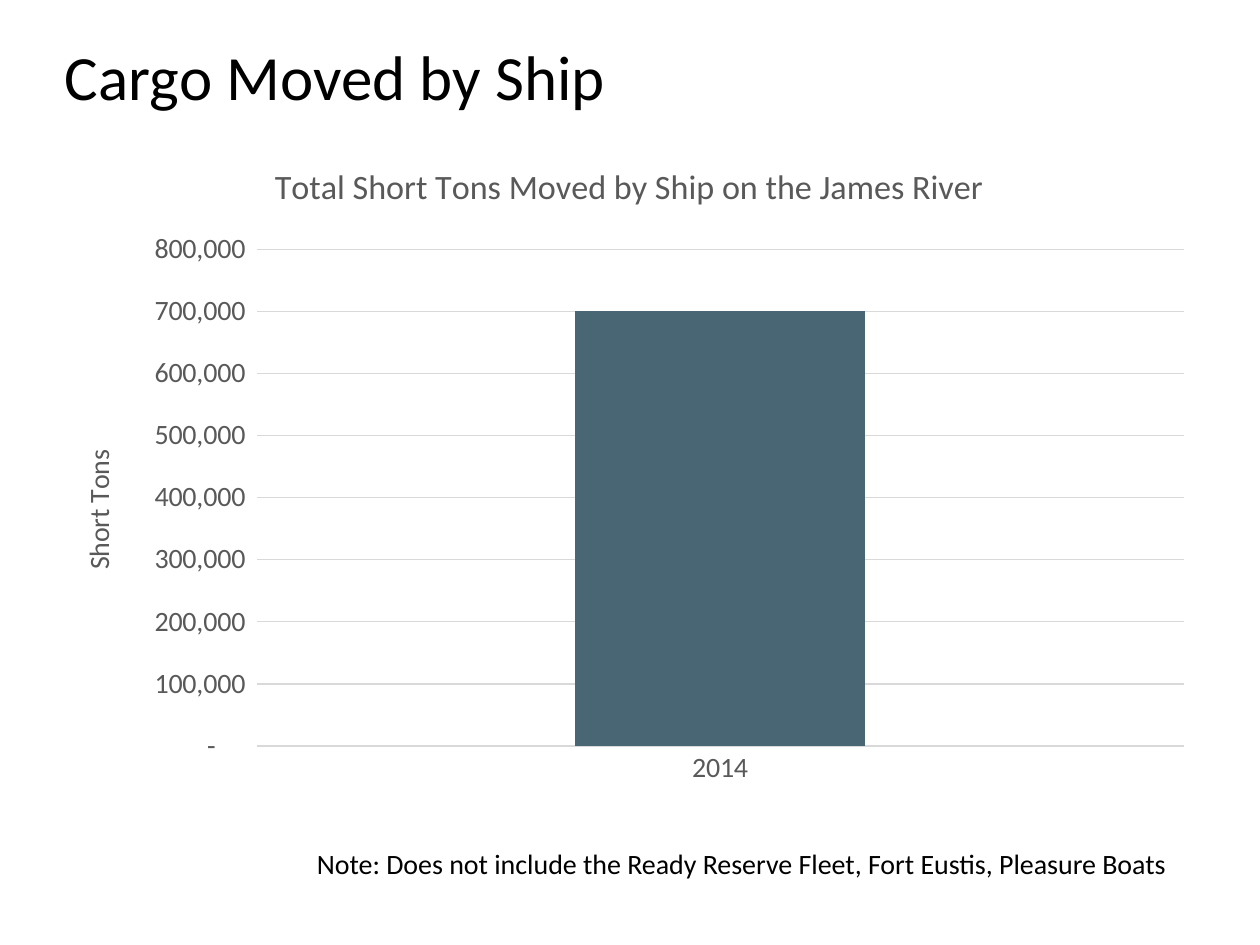
from pptx import Presentation
from pptx.chart.data import CategoryChartData
from pptx.dml.color import RGBColor
from pptx.enum.chart import XL_CHART_TYPE, XL_TICK_MARK
from pptx.oxml import parse_xml
from pptx.oxml.ns import nsdecls
from pptx.util import Cm, Pt

HUES = {"ink": "000000", "gray": "595959", "rule": "D9D9D9", "bar": "486674"}
TONS = r'_(* #,##0_);_(* \(#,##0\);_(* "-"??_);_(@_)'


class Deck:
    """Holds the style and the current slide."""

    def __init__(self):
        self.prs = Presentation()
        self.prs.slide_width, self.prs.slide_height = Cm(25.4), Cm(19.05)
        self.slide = self.prs.slides.add_slide(self.prs.slide_layouts[6])

    def hue(self, name):
        return RGBColor.from_string(HUES[name])

    def font(self, font, size, hue):
        look = {"name": "Calibri", "size": Pt(size), "bold": False}
        for key, val in look.items():
            setattr(font, key, val)
        font.color.rgb = self.hue(hue)

    def text(self, words, box, size):
        frame = self.slide.shapes.add_textbox(*map(Cm, box)).text_frame
        frame.word_wrap = True
        para = frame.paragraphs[0]
        para.text = words
        self.font(para.font, size, "ink")

    def rule(self, form):
        form.line.color.rgb = self.hue("rule")
        form.line.width = Pt(0.75)

    def place(self, part, spot, inner=False):
        tags = '<c:layoutTarget val="inner"/>' if inner else ""
        tags += "".join(f'<c:{k}Mode val="edge"/>' for k in "xy")
        tags += "".join(f'<c:{k} val="{v / 100}"/>' for k, v in zip("xywh", spot))
        for old in part.findall("{*}layout"):
            part.remove(old)
        node = parse_xml(f'<c:layout {nsdecls("c")}><c:manualLayout>{tags}'
                         '</c:manualLayout></c:layout>')
        part.insert(0 if inner else 1, node)

    def title(self, owner, words, size, spot):
        head = owner.chart_title if hasattr(owner, "chart_title") else owner.axis_title
        para = head.text_frame.paragraphs[0]
        run = para.add_run()
        run.text = words
        self.font(run.font, size, "gray")
        self.place(head._element, spot)

    def axis(self, axis, form):
        for key, val in form.items():
            setattr(axis, key, val)
        self.font(axis.tick_labels.font, 16, "gray")

    def chart(self, cats, name, vals, box):
        data = CategoryChartData(number_format="#,##0")
        data.categories = cats
        data.add_series(name, vals)
        chart = self.slide.shapes.add_chart(
            XL_CHART_TYPE.COLUMN_STACKED, *map(Cm, box), data).chart
        self.font(chart.font, 16, "ink")
        chart.has_legend = False
        plot = chart.plots[0]
        form = {"gap_width": 219, "overlap": 100, "vary_by_categories": False}
        for key, val in form.items():
            setattr(plot, key, val)
        fill = plot.series[0].format.fill
        fill.solid()
        fill.fore_color.rgb = self.hue("bar")
        ticks = {"major_tick_mark": XL_TICK_MARK.NONE,
                 "minor_tick_mark": XL_TICK_MARK.NONE}
        cat, val = chart.category_axis, chart.value_axis
        self.axis(cat, ticks)
        self.rule(cat.format)
        self.axis(val, ticks | {"minimum_scale": 0, "maximum_scale": 800000,
                                "major_unit": 100000, "has_major_gridlines": True})
        val.format.line.fill.background()
        self.rule(val.major_gridlines.format)
        val.tick_labels.number_format = TONS
        val.tick_labels.number_format_is_linked = False
        self.title(chart, "Total Short Tons Moved by Ship on the James River",
                   19.5, (18.7, 3))
        self.title(val, "Short Tons", 16, (1.9, 46.6))
        area = chart._chartSpace.chart.plotArea
        self.place(area, (17.65, 17.05, 80.25, 75.1), True)


def main():
    deck = Deck()
    deck.text("Cargo Moved by Ship", (1.06, 0.64, 23.29, 1.47), 36)
    deck.text("Note: Does not include the Ready Reserve Fleet, Fort Eustis, Pleasure Boats",
              (6.14, 16.94, 17.78, 0.84), 16)
    deck.chart(["2014"], "Series 1", [700000], (1.06, 2.75, 23.29, 13.34))
    deck.prs.save("out.pptx")


if __name__ == "__main__":
    main()
